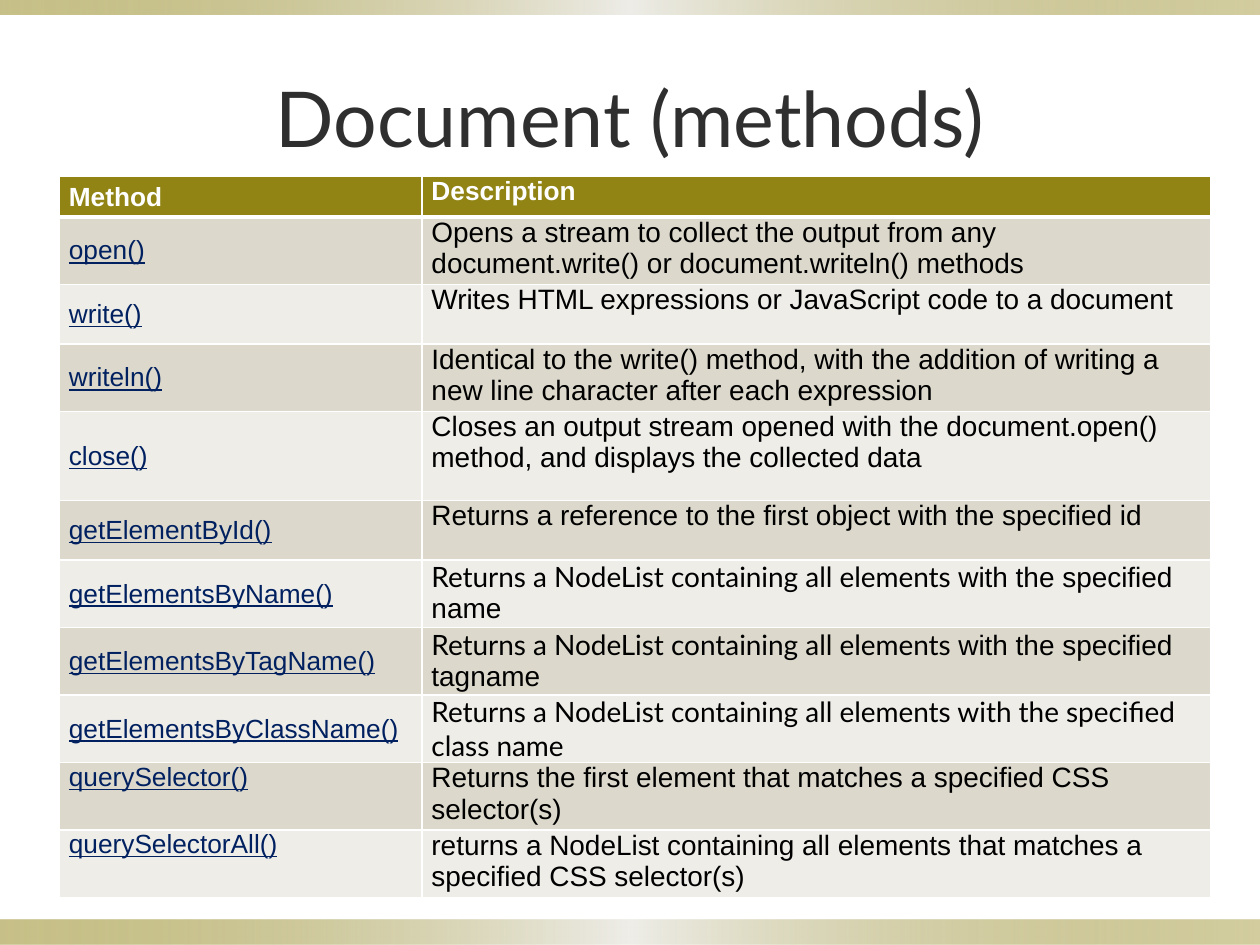
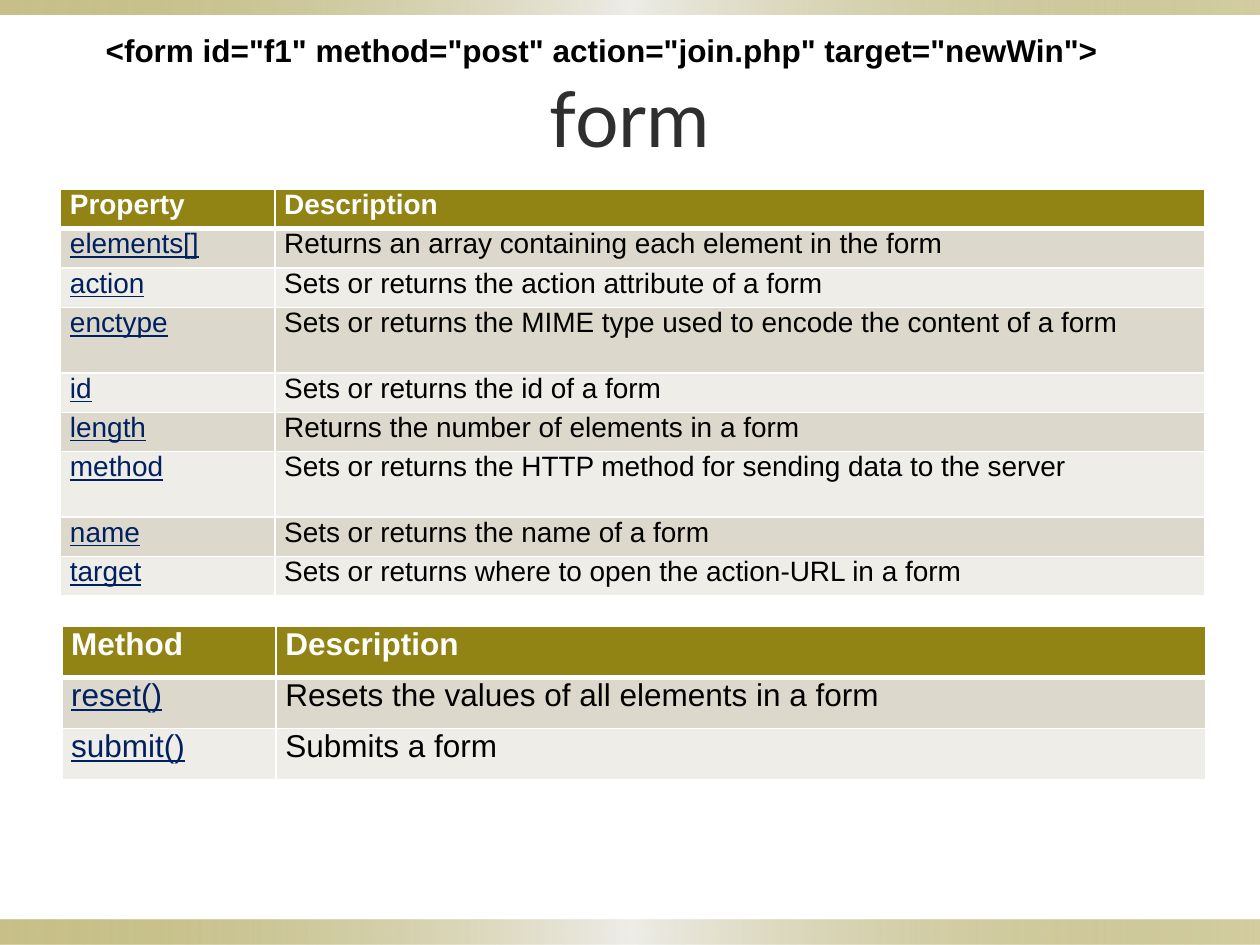
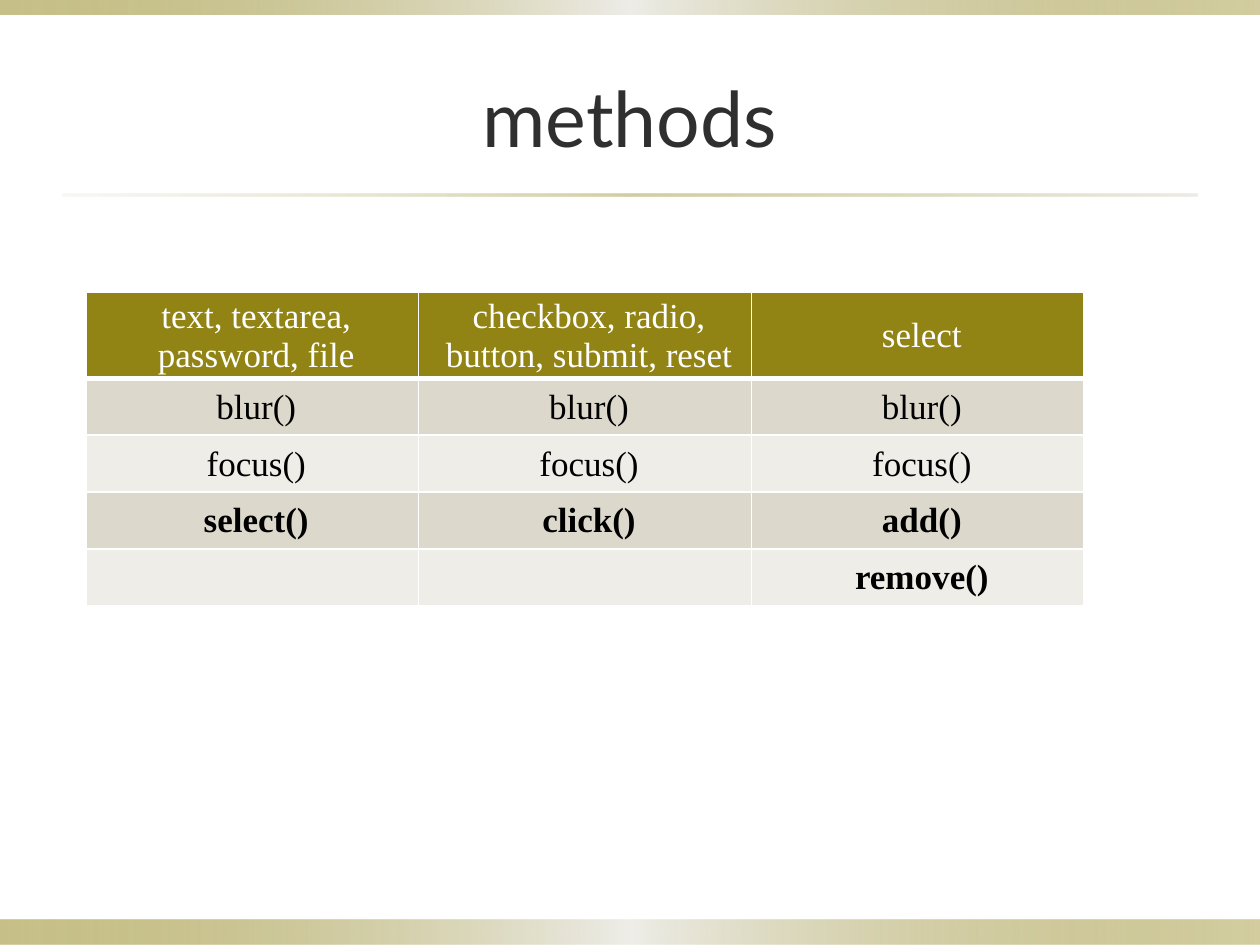
from lxml import etree
from pptx import Presentation
from pptx import util as u
from pptx.dml.color import RGBColor
from pptx.enum import shapes, text
from pptx.oxml.ns import qn

Pt = u.Pt
TOP, MIDDLE = text.MSO_ANCHOR.TOP, text.MSO_ANCHOR.MIDDLE
LEFT, CENTER = text.PP_ALIGN.LEFT, text.PP_ALIGN.CENTER

# Shared look
COLORS = {"olive": "918415", "sand": "DCD9CC", "pale": "EEEDE8", "title": "2F2F2F",
          "link": "002060", "black": "000000", "white": "FFFFFF"}
BAND = [(0, "olive", 50), (50, "pale", 100), (100, "olive", 40)]
RULE = [(0, "sand", 20), (50, "olive", 40), (100, "sand", 50)]
DECORATIONS = [((0, 525.5, 720, 14.5), BAND), ((0, 0, 720, 8.6), BAND),
               ((36, 110.9, 648, 1.6), RULE)]
TITLE_BOX = (36, 21.6, 648, 90)
TITLE = {"name": "Lato", "size": 44, "color": "title"}
CODE_BOX = (53.3, 14.4, 617.8, 28.8)
CODE = {"name": "Arial", "size": 18, "color": "black", "bold": True}


def reference_formats(size, link_size=None):
    """Header, link column and description formats of a reference table."""
    base = {"name": "Arial", "size": size, "color": "black", "bold": False}
    link_size = link_size or size
    return {"header": base | {"size": link_size, "color": "white", "bold": True},
            "link": base | {"size": link_size, "color": "link", "underline": True},
            "body": base}


# Content: a cell is a string or a list of (text, font name) runs
NODE_LIST = ("Returns a NodeList containing all elements ", "Lato")
DOCUMENT_METHODS = [
    ("Method", "Description"),
    ("open()", "Opens a stream to collect the output from any document.write() or "
               "document.writeln() methods"),
    ("write()", "Writes HTML expressions or JavaScript code to a document"),
    ("writeln()", "Identical to the write() method, with the addition of writing a new line "
                  "character after each expression"),
    ("close()", "Closes an output stream opened with the document.open() method, and displays "
                "the collected data"),
    ("getElementById()", "Returns a reference to the first object with the specified id"),
    ("getElementsByName()", [NODE_LIST, ("with the specified name", "Arial")]),
    ("getElementsByTagName()", [NODE_LIST, ("with the specified tagname", "Arial")]),
    ("getElementsByClassName()", [(NODE_LIST[0] + "with the specified class name", "Lato")]),
    ("querySelector()", "Returns the first element that matches a specified CSS selector(s)"),
    ("querySelectorAll()", "returns a NodeList containing all elements that matches a specified "
                           "CSS selector(s)"),
]
FORM_PROPERTIES = [
    ("Property", "Description"),
    ("elements[]", "Returns an array containing each element in the form"),
    ("action", "Sets or returns the action attribute of a form"),
    ("enctype", "Sets or returns the MIME type used to encode the content of a form"),
    ("id", "Sets or returns the id of a form"),
    ("length", "Returns the number of elements in a form"),
    ("method", "Sets or returns the HTTP method for sending data to the server"),
    ("name", "Sets or returns the name of a form"),
    ("target", "Sets or returns where to open the action-URL in a form"),
]
FORM_METHODS = [
    ("Method", "Description"),
    ("reset()", "Resets the values of all elements in a form"),
    ("submit()", "Submits a form"),
]
CONTROL_METHODS = [
    ("text, textarea, password, file", "checkbox, radio, button, submit, reset", "select"),
    ("blur()",) * 3,
    ("focus()",) * 3,
    ("select()", "click()", "add()"),
    ("", "", "remove()"),
]
FORM_TAG = '<form id="f1" method="post" action="join.php" target="newWin">'
CONTROL = {"name": "Times New Roman", "size": 20, "color": "black", "bold": False}
FORM_COLUMNS = [122.4, 531.4]

SLIDES = [
    {"title": "Document (methods)", "tables": [
        {"rows": DOCUMENT_METHODS, "at": (34, 101), "columns": [207.2, 450.8],
         "heights": [23, 38.6, 34, 38.6, 51, 34, 38.6, 38.6, 38.6, 36, 38.6],
         "formats": reference_formats(16, 15), "middle_rows": range(9)}]},
    {"title": "form", "code": FORM_TAG, "tables": [
        {"rows": FORM_PROPERTIES, "at": (34.6, 108.2), "columns": FORM_COLUMNS,
         "heights": [22.5, 22.5, 22.5, 37.5, 22.5, 22.5, 37.5, 22.5, 22.5],
         "formats": reference_formats(16)},
        {"rows": FORM_METHODS, "at": (35.3, 358), "columns": FORM_COLUMNS,
         "heights": [29.2] * 3, "formats": reference_formats(18)}]},
    {"title": "methods", "tables": [
        {"rows": CONTROL_METHODS, "at": (49, 167.2), "columns": [190.2] * 3,
         "heights": [49] + [32.5] * 4, "centered": True, "bold_from": 3,
         "formats": {"header": CONTROL | {"color": "white"}, "body": CONTROL}}]},
]


# Helpers
def rgb(name):
    return RGBColor.from_string(COLORS[name])


def points(values):
    return [Pt(value) for value in values]


def write(paragraph, content, style, alignment=LEFT):
    paragraph.alignment = alignment
    runs = [(content, style["name"])] if isinstance(content, str) else content
    for words, font_name in runs:
        run = paragraph.add_run()
        run.text = words
        for key, value in (style | {"name": font_name}).items():
            if key == "color":
                run.font.color.rgb = rgb(value)
            else:
                setattr(run.font, key, Pt(value) if key == "size" else value)


def add_text(slide, box, content, style, alignment=LEFT, anchor=TOP):
    frame = slide.shapes.add_textbox(*points(box)).text_frame
    frame.word_wrap = True
    frame.vertical_anchor = anchor
    write(frame.paragraphs[0], content, style, alignment)


def add_gradient_bar(slide, box, stops):
    bar = slide.shapes.add_shape(shapes.MSO_SHAPE.RECTANGLE, *points(box))
    bar.shadow.inherit = False
    bar.line.fill.background()
    bar.fill.background()
    gradient = etree.Element(qn("a:gradFill"), rotWithShape="1")
    stop_list = etree.SubElement(gradient, qn("a:gsLst"))
    for position, color, opacity in stops:
        stop = etree.SubElement(stop_list, qn("a:gs"), pos=str(position * 1000))
        tint = etree.SubElement(stop, qn("a:srgbClr"), val=COLORS[color])
        if opacity < 100:
            etree.SubElement(tint, qn("a:alpha"), val=str(opacity * 1000))
    etree.SubElement(gradient, qn("a:lin"), ang="0", scaled="0")
    properties = bar._element.spPr
    properties.replace(properties.find(qn("a:noFill")), gradient)


def set_borders(cell, row):
    """White cell borders, with a heavy one below the header."""
    widths = {"lnL": 1, "lnR": 1, "lnT": 3 if row == 1 else 1, "lnB": 3 if row == 0 else 1}
    properties = cell._tc.get_or_add_tcPr()
    for index, (side, width) in enumerate(widths.items()):
        line = etree.Element(qn("a:" + side), w=str(Pt(width)))
        fill = etree.SubElement(line, qn("a:solidFill"))
        etree.SubElement(fill, qn("a:srgbClr"), val=COLORS["white"])
        properties.insert(index, line)


def cell_format(formats, row, column, bold_from):
    if row == 0:
        return formats["header"]
    if column == 0 and "link" in formats:
        return formats["link"]
    return formats["body"] | {"bold": row >= bold_from}


def add_table(slide, rows, at, columns, heights, formats,
              middle_rows=(), centered=False, bold_from=99):
    size = (sum(columns), sum(heights))
    table = slide.shapes.add_table(len(rows), len(columns), *points(at + size)).table
    table.horz_banding = table.first_row = False
    for column, width in zip(table.columns, columns):
        column.width = Pt(width)
    for r, (contents, height) in enumerate(zip(rows, heights)):
        table.rows[r].height = Pt(height)
        for c, content in enumerate(contents):
            cell = table.cell(r, c)
            in_middle = centered or (c == 0 and r in middle_rows)
            side = 0.75 if centered else 0
            layout = {"margin_left": Pt(5.4), "margin_top": Pt(side), "margin_right": Pt(side),
                      "margin_bottom": 0, "vertical_anchor": MIDDLE if in_middle else TOP}
            for key, value in layout.items():
                setattr(cell, key, value)
            cell.fill.solid()
            cell.fill.fore_color.rgb = rgb("olive" if r == 0 else "sand" if r % 2 else "pale")
            set_borders(cell, r)
            if content:
                write(cell.text_frame.paragraphs[0], content,
                      cell_format(formats, r, c, bold_from), CENTER if centered else LEFT)


def main():
    presentation = Presentation()
    presentation.slide_width, presentation.slide_height = Pt(720), Pt(540)
    for content in SLIDES:
        slide = presentation.slides.add_slide(presentation.slide_layouts[6])
        for box, stops in DECORATIONS:
            add_gradient_bar(slide, box, stops)
        add_text(slide, TITLE_BOX, content["title"], TITLE, CENTER, MIDDLE)
        for table in content["tables"]:
            add_table(slide, **table)
        if "code" in content:
            add_text(slide, CODE_BOX, content["code"], CODE)
    presentation.save("out.pptx")


if __name__ == "__main__":
    main()
